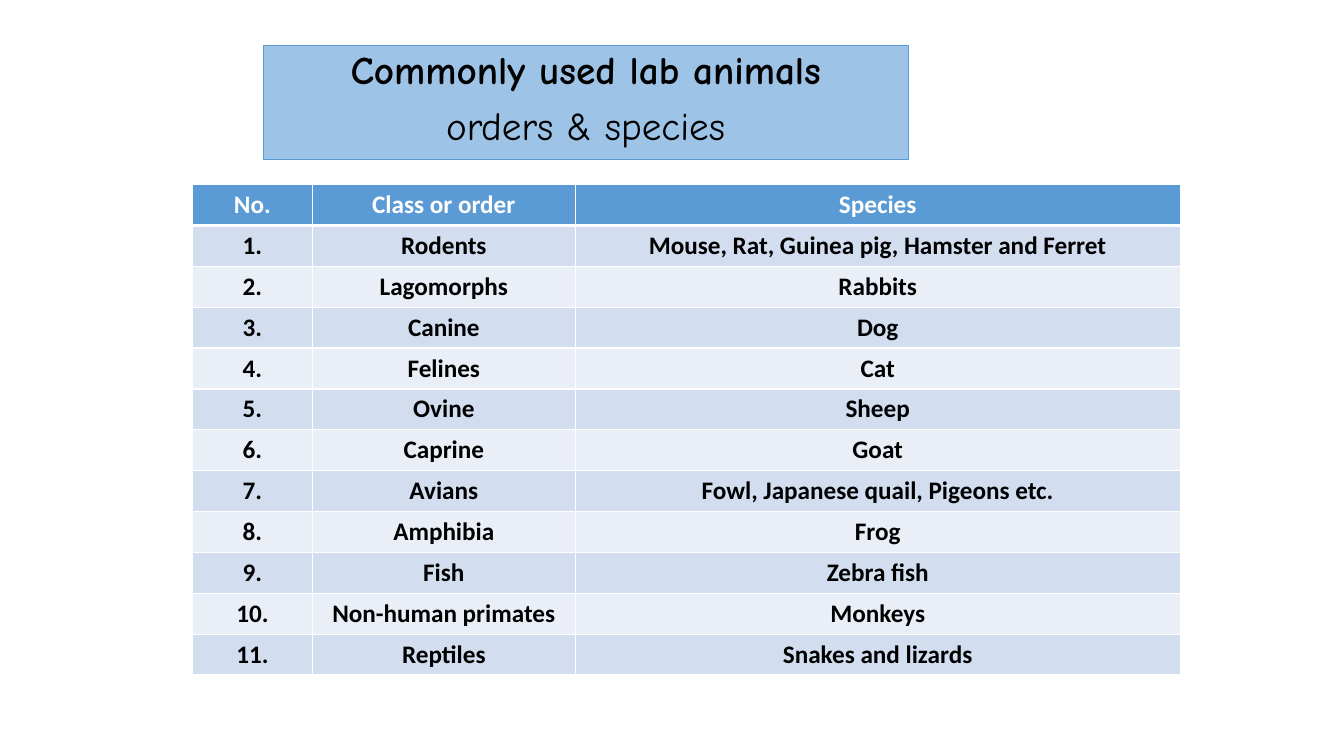
"""Build a slide with a table of commonly used lab animals, by order and species."""
from dataclasses import dataclass

from lxml.etree import SubElement
from pptx import Presentation
from pptx.dml.color import RGBColor
from pptx.enum.shapes import MSO_SHAPE as Shape
from pptx.enum.text import MSO_ANCHOR as Anchor, PP_ALIGN as Align
from pptx.oxml.ns import qn
from pptx.util import Cm, Pt


@dataclass(frozen=True)
class Theme:
    title_font: str = "Comic Neue"
    table_font: str = "Calibri"
    title_size: int = 28
    table_size: int = 18
    title_fill: str = "9DC3E6"
    accent: str = "5B9BD5"
    bands: tuple = ("EAEFF7", "D2DEEF")
    black: str = "000000"
    white: str = "FFFFFF"


theme = Theme()


def write(paragraph, text, *, font, size, color=theme.black, bold=True):
    paragraph.alignment = Align.CENTER
    run = paragraph.add_run()
    run.text = text
    run.font.name = font
    run.font.size = Pt(size)
    run.font.bold = bold
    run.font.color.rgb = RGBColor.from_string(color)


def add_border(cell, side, width):
    line = SubElement(cell._tc.get_or_add_tcPr(), qn(f"a:ln{side}"), w=str(Pt(width)))
    fill = SubElement(line, qn("a:solidFill"))
    SubElement(fill, qn("a:srgbClr"), val=theme.white)


presentation = Presentation()
presentation.slide_width = Cm(33.87)
presentation.slide_height = Cm(19.05)
slide = presentation.slides.add_slide(presentation.slide_layouts[6])

title = slide.shapes.add_shape(Shape.RECTANGLE, Cm(6.63), Cm(1.14), Cm(16.26), Cm(2.88))
title.shadow.inherit = False
title.fill.solid()
title.fill.fore_color.rgb = RGBColor.from_string(theme.title_fill)
title.line.color.rgb = RGBColor.from_string(theme.accent)
title.line.width = Pt(0.75)
frame = title.text_frame
frame.word_wrap = True
frame.vertical_anchor = Anchor.TOP
heading = frame.paragraphs[0]
subheading = frame.add_paragraph()
subheading.space_before = Pt(10)
write(heading, "Commonly used lab animals", font=theme.title_font, size=theme.title_size)
write(subheading, "orders & species", font=theme.title_font, size=theme.title_size, bold=False)
for paragraph in frame.paragraphs:
    paragraph.line_spacing = 0.9

animals = [
    ("Rodents", "Mouse, Rat, Guinea pig, Hamster and Ferret"),
    ("Lagomorphs", "Rabbits"),
    ("Canine", "Dog"),
    ("Felines", "Cat"),
    ("Ovine", "Sheep"),
    ("Caprine", "Goat"),
    ("Avians", "Fowl, Japanese quail, Pigeons etc."),
    ("Amphibia", "Frog"),
    ("Fish", "Zebra fish"),
    ("Non-human primates", "Monkeys"),
    ("Reptiles", "Snakes and lizards"),
]
rows = [("No.", "Class or order", "Species")]
rows += [(f"{number}.", *animal) for number, animal in enumerate(animals, 1)]
column_widths = (3.02, 6.63, 15.24)

table = slide.shapes.add_table(
    len(rows), len(column_widths), Cm(4.85), Cm(4.65), Cm(sum(column_widths)), Cm(12.19)
).table
for column, width in zip(table.columns, column_widths):
    column.width = Cm(width)

for row_index, row in enumerate(rows):
    is_header = row_index == 0
    for column_index, text in enumerate(row):
        cell = table.cell(row_index, column_index)
        for side in "LRTB":
            thick = (is_header and side == "B") or (row_index == 1 and side == "T")
            add_border(cell, side, 3 if thick else 1)
        cell.fill.solid()
        cell.fill.fore_color.rgb = RGBColor.from_string(
            theme.accent if is_header else theme.bands[row_index % 2]
        )
        write(
            cell.text_frame.paragraphs[0],
            text,
            font=theme.table_font,
            size=theme.table_size,
            color=theme.white if is_header else theme.black,
        )

presentation.save("out.pptx")
